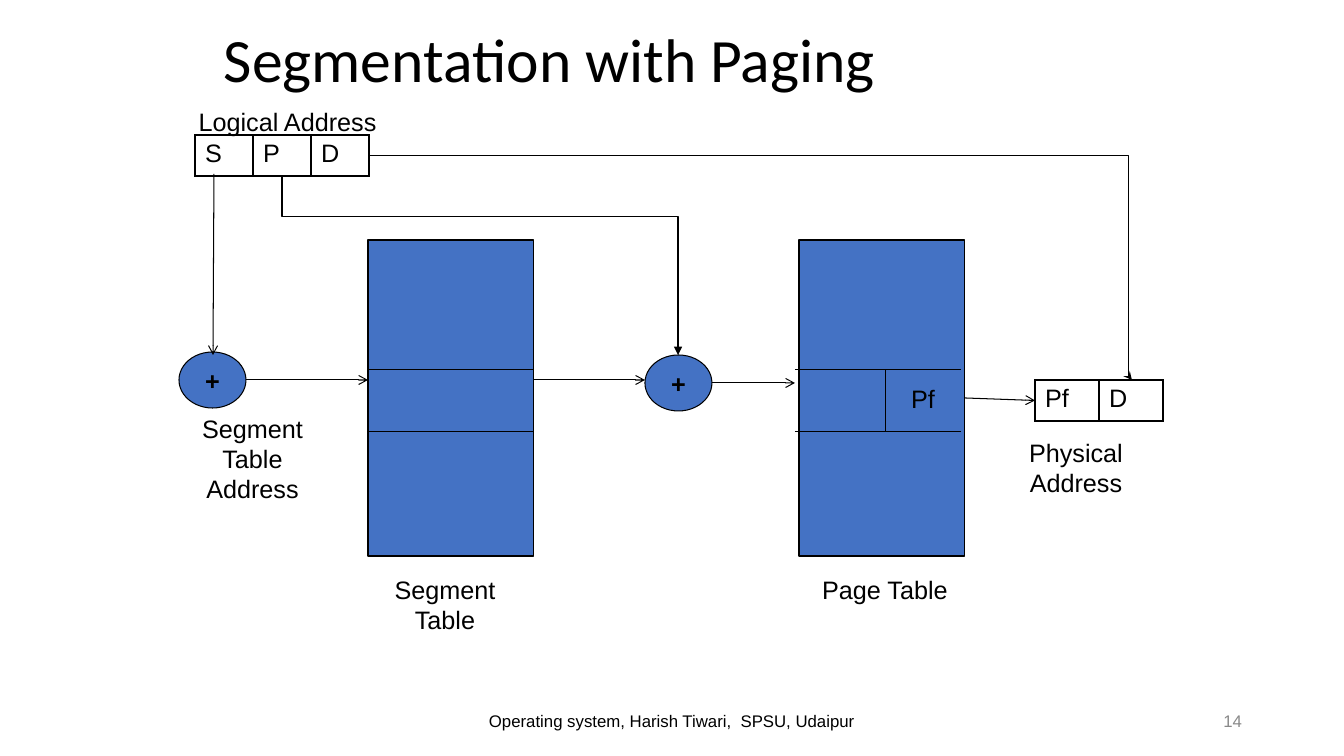
import pptx
import pptx.util
import pptx.dml.color
import pptx.enum.shapes
import pptx.enum.text
import pptx.oxml
import pptx.oxml.ns

EMU_PER_PX = 914400 / 100.8
COLORS = {"ink": "000000", "block": "4472C4", "paper": "FFFFFF", "number": "898989"}
ALIGN = pptx.enum.text.PP_ALIGN
ANCHOR = pptx.enum.text.MSO_ANCHOR
SHAPE = pptx.enum.shapes.MSO_SHAPE
CONNECTOR = pptx.enum.shapes.MSO_CONNECTOR


def px(length):
    return pptx.util.Emu(round(length * EMU_PER_PX))


def color(key):
    return pptx.dml.color.RGBColor.from_string(COLORS[key])


def xml(tag, body="", attributes=""):
    namespace = pptx.oxml.ns.nsdecls("a")
    return pptx.oxml.parse_xml(f"<a:{tag} {namespace} {attributes}>{body}</a:{tag}>")


def write(frame, text, size=18, font="Arial", ink="ink", align=ALIGN.CENTER, bold=False):
    frame.text = text
    paragraph = frame.paragraphs[0]
    paragraph.alignment = align
    paragraph.font.size = pptx.util.Pt(size)
    paragraph.font.name = font
    paragraph.font.bold = bold
    paragraph.font.color.rgb = color(ink)
    return paragraph


def add_label(slide, box, text, anchor=ANCHOR.TOP, **style):
    frame = slide.shapes.add_textbox(*map(px, box)).text_frame
    frame.word_wrap = True
    frame.vertical_anchor = anchor
    return write(frame, text, **style)


def add_block(slide, preset, box):
    block = slide.shapes.add_shape(preset, *map(px, box))
    block.shadow.inherit = False
    block.fill.solid()
    block.fill.fore_color.rgb = color("block")
    block.line.color.rgb = color("ink")
    block.line.width = pptx.util.Pt(0.75)
    return block


def add_adder(slide, box):
    adder = add_block(slide, SHAPE.OVAL, box)
    adder.text_frame.word_wrap = False
    adder.text_frame.vertical_anchor = ANCHOR.MIDDLE
    write(adder.text_frame, "+", bold=True)


def add_line(slide, start, end, kind=CONNECTOR.STRAIGHT, head=None, tail=None):
    """Draw a thin line; head marks its start and tail its end."""
    line = slide.shapes.add_connector(kind, *map(px, (*start, *end)))
    line.line.color.rgb = color("ink")
    line.line.width = pptx.util.Pt(0.75)
    for tag, arrow in (("headEnd", head), ("tailEnd", tail)):
        if arrow:
            line.line._get_or_add_ln().append(xml(tag, attributes=f'type="{arrow}"'))
    line._element.spPr.append(xml("effectLst"))
    return line


def add_elbow(slide, start, end, bend, head, upright=False):
    """Draw a two-bend line turning at the share bend; upright ones leave vertically."""
    if upright:
        middle_x, middle_y = (start[0] + end[0]) / 2, (start[1] + end[1]) / 2
        half_w, half_h = abs(start[1] - end[1]) / 2, abs(start[0] - end[0]) / 2
        start = middle_x - half_w, middle_y + half_h
        end = middle_x + half_w, middle_y - half_h
    elbow = add_line(slide, start, end, CONNECTOR.ELBOW, head=head)
    elbow.adjustments = None
    guides = elbow._element.spPr.prstGeom.get_or_add_avLst()
    guides.append(xml("gd", attributes=f'name="adj1" fmla="val {round(bend * 100000)}"'))
    if upright:
        elbow._element.spPr.xfrm.set("rot", str(270 * 60000))


def add_address(slide, box, fields):
    """Draw an address as a one-row table with a cell for each field."""
    frame = slide.shapes.add_table(1, len(fields), *map(px, box))
    table = frame.table
    table.first_row = table.horz_banding = False
    for column, field in enumerate(fields):
        table.columns[column].width = px(box[2] / len(fields))
        cell = table.cell(0, column)
        write(cell.text_frame, field, align=ALIGN.LEFT)
        for side in ("lnL", "lnR", "lnT", "lnB"):
            stroke = f'<a:solidFill><a:srgbClr val="{COLORS["ink"]}"/></a:solidFill>'
            cell._tc.get_or_add_tcPr().append(xml(side, stroke, 'w="12700"'))
        cell.fill.solid()
        cell.fill.fore_color.rgb = color("paper")
    return frame


def add_memory_table(slide, box, rule_shift=0):
    """Draw a tall table with one entry marked off by two rules."""
    left, top, width, _ = box
    block = add_block(slide, SHAPE.RECTANGLE, box)
    for offset in (130, 192):
        add_line(slide, (left + rule_shift, top + offset),
                 (left + rule_shift + width, top + offset))
    return block


def add_page_table(slide, box):
    left, top = box[:2]
    block = add_memory_table(slide, box, rule_shift=-4)
    add_line(slide, (left + 87, top + 130), (left + 87, top + 192))
    block.text_frame.margin_right = px(30)
    block.text_frame.vertical_anchor = ANCHOR.MIDDLE
    write(block.text_frame, "Pf", align=ALIGN.RIGHT)
    return block


def add_diagram(slide, box):
    left, top, width, _ = box

    def at(x, y, *size):
        return left + x, top + y, *size

    add_address(slide, at(17, 35, 174, 41), ["S", "P", "D"])
    physical = add_address(slide, at(857, 280, 128, 41), ["Pf", "D"])
    add_memory_table(slide, at(190, 140, 166, 316))
    page_table = add_page_table(slide, at(621, 140, 166, 316))
    add_adder(slide, at(1, 252, 67, 56))
    add_adder(slide, at(467, 255, 67, 56))

    for start, end in (((36, 74), (35, 255)), ((68, 280), (190, 280)),
                       ((356, 280), (467, 280)), ((534, 283), (617, 283))):
        add_line(slide, at(*start), at(*end), tail="arrow")
    frame_lookup = add_line(slide, at(787, 298), at(857, 300), tail="arrow")
    frame_lookup.begin_connect(page_table, 3)
    frame_lookup.end_connect(physical, 1)
    add_elbow(slide, at(500, 255), at(104, 76), 0.775, "triangle", upright=True)
    add_elbow(slide, at(954, 280), at(192, 56), 0.005, "stealth")

    for text, place in (("Logical Address", (-57, 1, 333, 40)),
                        ("Segment Table Address", (8, 308, 133, 102)),
                        ("Segment Table", (177, 469, 180, 72)),
                        ("Page Table", (617, 469, 180, 40)),
                        ("Physical Address", (798, 332, 200, 72))):
        add_label(slide, at(*place), text)


def add_title(slide, box):
    title = add_label(slide, box, "Segmentation with Paging", ANCHOR.MIDDLE,
                      size=44, font="Calibri", align=ALIGN.LEFT)
    title.line_spacing = 0.9


def add_footer(slide, box):
    left, top, width, height = box
    add_label(slide, (left, top, 454, height),
              "Operating system, Harish Tiwari,  SPSU, Udaipur", ANCHOR.MIDDLE, size=12)
    add_label(slide, (left + width - 302, top, 302, height), "14", ANCHOR.MIDDLE,
              size=12, ink="number", align=ALIGN.RIGHT)


def main():
    deck = pptx.Presentation()
    deck.slide_width, deck.slide_height = px(1344), px(756)
    slide = deck.slides.add_slide(deck.slide_layouts[6])
    add_title(slide, (214, 0, 907, 126))
    add_diagram(slide, (178, 100, 986, 541))
    add_footer(slide, (445, 701, 807, 40))
    deck.save("out.pptx")


if __name__ == "__main__":
    main()
